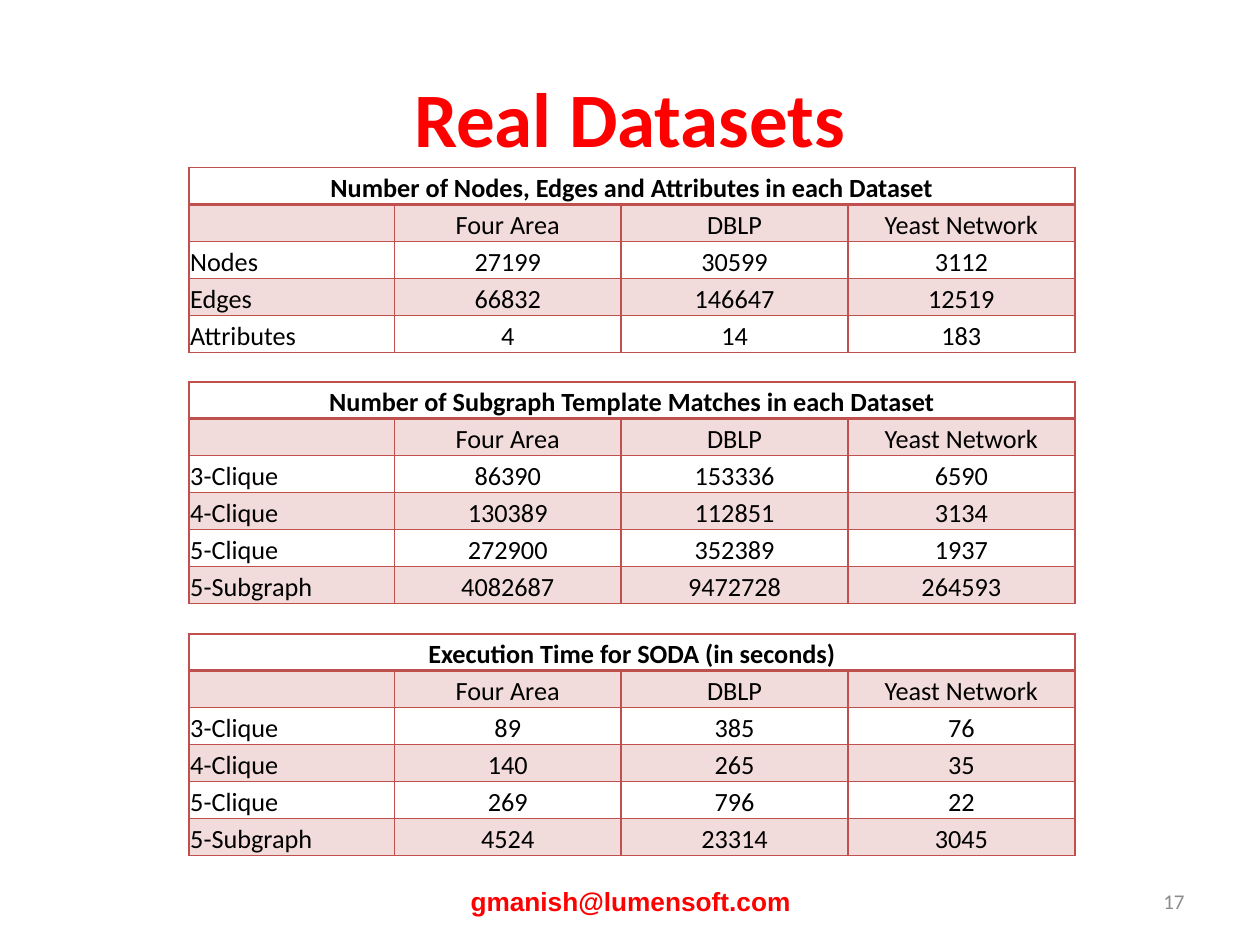
from dataclasses import dataclass

from lxml.etree import SubElement
from pptx import Presentation
from pptx.dml.color import RGBColor
from pptx.enum.text import MSO_ANCHOR, PP_ALIGN
from pptx.oxml.ns import qn
from pptx.util import Inches, Pt


@dataclass(frozen=True)
class Theme:
    font: str = "Calibri"
    footer_font: str = "Arial"
    red: str = "FF0000"
    black: str = "000000"
    gray: str = "8C8C8C"
    accent: str = "C0504D"
    band_alpha: int = 20000
    title_size: int = 44
    body_size: int = 15
    number_size: int = 12


theme = Theme()


def style_text(tf, align, size, color, bold, font=theme.font):
    p = tf.paragraphs[0]
    p.alignment = align
    for r in p.runs:
        r.font.name = font
        r.font.size = Pt(size)
        r.font.bold = bold
        r.font.color.rgb = RGBColor.from_string(color)
    if not p.runs:
        # The end mark keeps an empty cell from stretching its row.
        SubElement(p._p, qn("a:endParaRPr"), sz=str(size * 100))


def set_borders(cell, bottom=1, top=1):
    """Draw the four cell edges; widths are in points."""
    tcPr = cell._tc.get_or_add_tcPr()
    for edge, width in (("L", 1), ("R", 1), ("T", top), ("B", bottom)):
        ln = SubElement(tcPr, qn(f"a:ln{edge}"), w=str(Pt(width)))
        fill = SubElement(ln, qn("a:solidFill"))
        SubElement(fill, qn("a:srgbClr"), val=theme.accent)


prs = Presentation()
prs.slide_width, prs.slide_height = Inches(10), Inches(7.5)
s = prs.slides.add_slide(prs.slide_layouts[6])

# Title, footer and slide number
texts = [
    ("Real Datasets", (0.5, 0.3, 9, 1.25), PP_ALIGN.CENTER,
     theme.title_size, theme.red, True, theme.font),
    ("gmanish@lumensoft.com", (3.42, 6.95, 3.17, 0.4), PP_ALIGN.CENTER,
     theme.body_size, theme.red, True, theme.footer_font),
    ("17", (7.17, 6.95, 2.33, 0.4), PP_ALIGN.RIGHT,
     theme.number_size, theme.gray, False, theme.font),
]
for text, box, align, size, color, bold, font in texts:
    tf = s.shapes.add_textbox(*map(Inches, box)).text_frame
    tf.word_wrap = True
    tf.vertical_anchor = MSO_ANCHOR.MIDDLE
    tf.text = text
    style_text(tf, align, size, color, bold, font)

# Tables: top, height, heading, data rows
datasets = ("", "Four Area", "DBLP", "Yeast Network")
column_widths = (1.63, 1.8, 1.8, 1.8)
tables = [
    (1.33, 1.47, "Number of Nodes, Edges and Attributes in each Dataset", [
        ("Nodes", 27199, 30599, 3112),
        ("Edges", 66832, 146647, 12519),
        ("Attributes", 4, 14, 183),
    ]),
    (3.03, 1.76, "Number of Subgraph Template Matches in each Dataset", [
        ("3-Clique", 86390, 153336, 6590),
        ("4-Clique", 130389, 112851, 3134),
        ("5-Clique", 272900, 352389, 1937),
        ("5-Subgraph", 4082687, 9472728, 264593),
    ]),
    (5.03, 1.76, "Execution Time for SODA (in seconds)", [
        ("3-Clique", 89, 385, 76),
        ("4-Clique", 140, 265, 35),
        ("5-Clique", 269, 796, 22),
        ("5-Subgraph", 4524, 23314, 3045),
    ]),
]
for top, height, heading, data in tables:
    rows = [(heading, "", "", ""), datasets, *data]
    table = s.shapes.add_table(
        len(rows), len(datasets), Inches(1.5), Inches(top),
        Inches(sum(column_widths)), Inches(height)).table
    table.first_row = table.horz_banding = False
    for column, width in zip(table.columns, column_widths):
        column.width = Inches(width)
    table.cell(0, 0).merge(table.cell(0, len(datasets) - 1))

    for i, row in enumerate(rows):
        for j, value in enumerate(row):
            cell = table.cell(i, j)
            cell.margin_left = cell.margin_right = cell.margin_top = Inches(0.01)
            cell.margin_bottom = 0
            cell.vertical_anchor = MSO_ANCHOR.BOTTOM
            set_borders(cell, bottom=2 if i == 0 else 1, top=2 if i == 1 else 1)
            if i % 2:
                cell.fill.solid()
                cell.fill.fore_color.rgb = RGBColor.from_string(theme.accent)
                color = cell._tc.tcPr.find(qn("a:solidFill")).find(qn("a:srgbClr"))
                SubElement(color, qn("a:alpha"), val=str(theme.band_alpha))
            else:
                cell.fill.background()
            if value != "":
                cell.text_frame.text = str(value)
            align = PP_ALIGN.LEFT if j == 0 and i > 0 else PP_ALIGN.CENTER
            style_text(cell.text_frame, align, theme.body_size, theme.black, i == 0)

prs.save("out.pptx")
